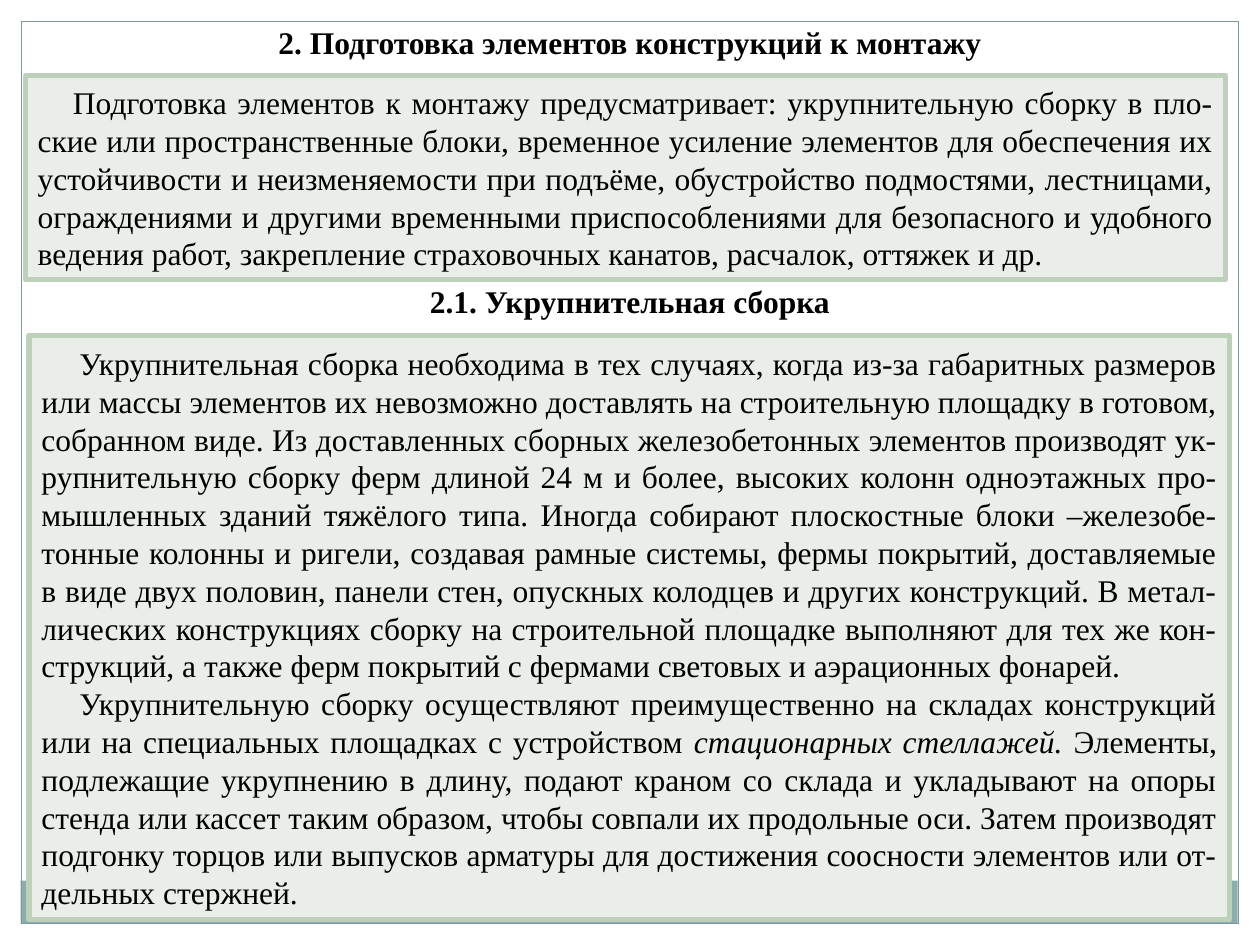
from pptx import Presentation
from pptx.dml.color import RGBColor
from pptx.enum import shapes, text
from pptx.util import Pt

BLACK = RGBColor(0x00, 0x00, 0x00)
TEAL = RGBColor(0x8C, 0xAD, 0xAE)
EDGE = RGBColor(0x7C, 0x99, 0x9A)
PALE = RGBColor(0xE9, 0xEF, 0xE8)
GREEN = RGBColor(0xBC, 0xD0, 0xBA)
FONT = "Times New Roman"
WIDE, HIGH = 720, 540

PREP = [[
    "Подготовка элементов к монтажу предусматривает: укрупнительную сборку в пло-ские "
    "или пространственные блоки, временное усиление элементов для обеспечения их "
    "устойчивости и неизменяемости при подъёме, обустройство подмостями, лестницами, "
    "ограждениями и другими временными приспособлениями для безопасного и удобного "
    "ведения работ, закрепление страховочных канатов, расчалок, оттяжек и др."
]]
# In each paragraph every second run is italic
JOIN = [
    [
        "Укрупнительная сборка необходима в тех случаях, когда из-за габаритных размеров "
        "или массы элементов их невозможно доставлять на строительную площадку в готовом, "
        "собранном виде. Из доставленных сборных железобетонных элементов производят "
        "ук-рупнительную сборку ферм длиной 24 м и более, высоких колонн одноэтажных "
        "про-мышленных зданий тяжёлого типа. Иногда собирают плоскостные блоки "
        "–железобе-тонные колонны и ригели, создавая рамные системы, фермы покрытий, "
        "доставляемые в виде двух половин, панели стен, опускных колодцев и других "
        "конструкций. В метал-лических конструкциях сборку на строительной площадке "
        "выполняют для тех же кон-струкций, а также ферм покрытий с фермами световых и "
        "аэрационных фонарей. "
    ],
    [
        "Укрупнительную сборку осуществляют преимущественно на складах конструкций или "
        "на специальных площадках с устройством ",
        "стационарных стеллажей. ",
        "Элементы, подлежащие укрупнению в длину, подают краном со склада и укладывают "
        "на опоры стенда или кассет таким образом, чтобы совпали их продольные оси. Затем "
        "производят подгонку торцов или выпусков арматуры для достижения соосности "
        "элементов или от-дельных стержней. ",
    ],
]


def style(run, bold=False, slant=False):
    font = run.font
    font.name, font.size = FONT, Pt(18)
    font.bold, font.italic = bold, slant
    font.color.rgb = BLACK


def rect(slide, x, y, w, h, fill=None, line=None, width=0.75):
    box = slide.shapes.add_shape(
        shapes.MSO_SHAPE.RECTANGLE, Pt(x), Pt(y), Pt(w), Pt(h))
    box.shadow.inherit = False
    if fill is None:
        box.fill.background()
    else:
        box.fill.solid()
        box.fill.fore_color.rgb = fill
    if line is None:
        box.line.fill.background()
    else:
        box.line.color.rgb = line
        box.line.width = Pt(width)
    return box


def title(slide, y, words):
    box = slide.shapes.add_textbox(0, Pt(y), Pt(WIDE), Pt(29))
    frame = box.text_frame
    frame.word_wrap = True
    frame.text = words
    para = frame.paragraphs[0]
    para.alignment = text.PP_ALIGN.CENTER
    style(para.runs[0], bold=True)


def panel(slide, x, y, w, h, paras, indent):
    frame = rect(slide, x, y, w, h, PALE, GREEN, 3).text_frame
    frame.word_wrap = True
    frame.vertical_anchor = text.MSO_ANCHOR.MIDDLE
    for i, parts in enumerate(paras):
        para = frame.add_paragraph() if i else frame.paragraphs[0]
        para.alignment = text.PP_ALIGN.JUSTIFY
        para._p.get_or_add_pPr().set("indent", str(Pt(indent)))
        for n, words in enumerate(parts):
            run = para.add_run()
            run.text = words
            style(run, slant=n % 2 == 1)


def main():
    deck = Presentation()
    deck.slide_width, deck.slide_height = Pt(WIDE), Pt(HIGH)
    slide = deck.slides.add_slide(deck.slide_layouts[6])

    # Page frame with its bottom band
    rect(slide, 11.75, 503.3, 695.5, 24.5, fill=TEAL)
    rect(slide, 12.25, 12.25, 695.5, 515.5, line=EDGE)

    # Preparation of elements
    title(slide, 9.4, "2. Подготовка элементов конструкций к монтажу")
    panel(slide, 14.4, 43.2, 686, 116.6, PREP, 20.2)

    # Pre-assembly
    title(slide, 157.7, "2.1. Укрупнительная сборка")
    panel(slide, 16.6, 191.5, 686, 334, JOIN, 21.6)

    deck.save("out.pptx")


if __name__ == "__main__":
    main()
